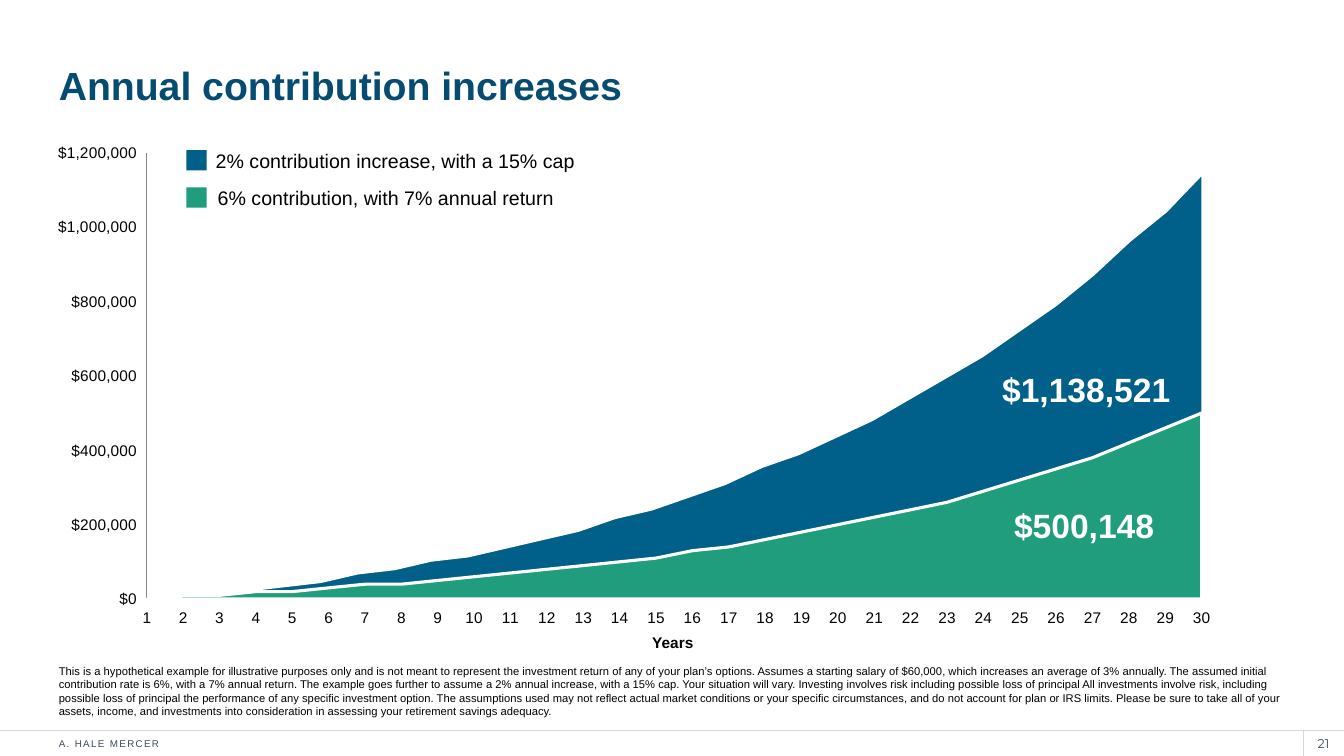
from dataclasses import dataclass

from lxml import etree
from pptx import Presentation
from pptx.chart.data import CategoryChartData
from pptx.dml.color import RGBColor
from pptx.enum.chart import XL_CHART_TYPE, XL_TICK_LABEL_POSITION, XL_TICK_MARK
from pptx.enum.shapes import MSO_CONNECTOR, MSO_SHAPE
from pptx.enum.text import MSO_ANCHOR, PP_ALIGN
from pptx.oxml import parse_xml
from pptx.oxml.ns import qn
from pptx.util import Pt

AREA = XL_CHART_TYPE.AREA
NO_TICK = XL_TICK_MARK.NONE
LOW = XL_TICK_LABEL_POSITION.LOW
RECTANGLE, STRAIGHT = MSO_SHAPE.RECTANGLE, MSO_CONNECTOR.STRAIGHT
TOP, MIDDLE, BOTTOM = MSO_ANCHOR.TOP, MSO_ANCHOR.MIDDLE, MSO_ANCHOR.BOTTOM
LEFT, CENTER, RIGHT = PP_ALIGN.LEFT, PP_ALIGN.CENTER, PP_ALIGN.RIGHT

COLORS = {
    "title": "054C70", "text": "000000", "white": "FFFFFF", "footer": "3B4B59",
    "rule": "D8D8D8", "axis": "868686", "increase": "00608A", "flat": "209D7D",
}
NS = ('xmlns:c="http://schemas.openxmlformats.org/drawingml/2006/chart" '
      'xmlns:a="http://schemas.openxmlformats.org/drawingml/2006/main"')
CHART_BOX = (7.92, 95.76, 874.08, 360.72)
YEARS = range(1, 31)


@dataclass
class Label:
    text: str
    box: tuple[float, float, float, float]
    size: float
    color: str = "text"
    bold: bool = False
    align: PP_ALIGN = LEFT
    anchor: MSO_ANCHOR = TOP
    font: str = "Arial"
    inset: float = 0
    line_spacing: float | None = None
    tracking: int = 0


@dataclass
class Growth:
    color: str
    values: list[int]
    plot: tuple[float, float, float, float]
    maximum: int
    major: int
    number_format: str
    font_size: float
    axes_shown: bool


DISCLAIMER = [
    "This is a hypothetical example for illustrative purposes only and is not meant to represent "
    "the investment return of any of your plan’s options.",
    "Assumes a starting salary of $60,000, which increases an average of 3% annually.",
    "The assumed initial contribution rate is 6%, with a 7% annual return.",
    "The example goes further to assume a 2% annual increase, with a 15% cap.",
    "Your situation will vary.",
    "Investing involves risk including possible loss of principal All investments involve risk, "
    "including possible loss of principal the performance of any specific investment option.",
    "The assumptions used may not reflect actual market conditions or your specific "
    "circumstances, and do not account for plan or IRS limits.",
    "Please be sure to take all of your assets, income, and investments into consideration in "
    "assessing your retirement savings adequacy.",
]

GROWTHS = [
    Growth("increase",
           [0, 1, 1, 2, 3, 4, 6, 7, 9, 10, 12, 14, 16, 19, 21, 24, 27, 31, 34, 38,
            42, 47, 52, 57, 63, 69, 76, 84, 91, 100],
           (0.103, 0.034, 0.871, 0.886), 105, 9, '"$"#,##0.00', 18, False),
    Growth("flat",
           [10000 * v for v in (0, 1, 1, 2, 2, 3, 4, 4, 5, 6, 7, 8, 9, 10, 11, 13, 14, 16, 18,
                                20, 22, 24, 26, 29, 32, 35, 38, 42, 46, 50)],
           (0.111, 0.037, 0.862, 0.884), 1200000, 200000, '"$"#,##0', 11, True),
]

LABELS = [
    Label("21", (930.96, 522, 28.8, 18), 9, "footer", align=CENTER, anchor=MIDDLE,
          font="Montserrat"),
    Label("A. HALE MERCER", (42, 527, 249.84, 8.64), 7, "footer", anchor=BOTTOM, tracking=100),
    Label(" ".join(DISCLAIMER), (42, 476.64, 876.24, 36), 8, anchor=BOTTOM),
    Label("Annual contribution increases", (42, 21.6, 876.24, 56.16), 28, "title", True,
          anchor=BOTTOM, line_spacing=0.85),
    Label("$500,148", (720.72, 360.72, 103.68, 28.8), 24, "white", True, RIGHT),
    Label("$1,138,521", (710.64, 263.52, 125.28, 28.8), 24, "white", True, RIGHT),
    Label("Years", (104.4, 452.16, 752.4, 13.68), 11, bold=True, align=CENTER),
    Label("6% contribution, with 7% annual return", (151.92, 128.88, 252, 24.48), 14,
          anchor=MIDDLE, inset=3.6),
    Label("2% contribution increase, with a 15% cap", (150.48, 102.24, 278.64, 24.48), 14,
          anchor=MIDDLE, inset=3.6),
]

LEGEND_KEYS = {"flat": 133.92, "increase": 107.28}
FOOTER_RULES = [(0, 522, 960, 522), (930.96, 522, 930.96, 540)]


def rgb(name: str) -> RGBColor:
    return RGBColor.from_string(COLORS[name])


def add_label(slide, label: Label) -> None:
    box = slide.shapes.add_textbox(*map(Pt, label.box))
    frame = box.text_frame
    frame.word_wrap = True
    frame.vertical_anchor = label.anchor
    frame.margin_left = frame.margin_right = Pt(label.inset)
    frame.margin_top = frame.margin_bottom = Pt(label.inset)
    frame.text = label.text
    paragraph = frame.paragraphs[0]
    paragraph.alignment = label.align
    if label.line_spacing:
        paragraph.line_spacing = label.line_spacing
    run = paragraph.runs[0]
    run.font.name, run.font.size, run.font.bold = label.font, Pt(label.size), label.bold
    run.font.color.rgb = rgb(label.color)
    if label.tracking:
        run.font._element.set("spc", str(label.tracking))


def add_growth(slide, growth: Growth) -> None:
    data = CategoryChartData()
    data.categories = [str(year) for year in YEARS]
    data.add_series("Series 1", growth.values)
    chart = slide.shapes.add_chart(AREA, *map(Pt, CHART_BOX), data).chart
    chart.has_legend = chart.has_title = False
    chart.font.name, chart.font.size = "Arial", Pt(growth.font_size)
    chart.font.color.rgb = rgb("text")
    plot = chart.plots[0]
    plot.vary_by_categories = False
    series_format = plot.series[0].format
    series_format.fill.solid()
    series_format.fill.fore_color.rgb = rgb(growth.color)
    series_format.line.color.rgb = rgb("white")
    series_format.line.width = Pt(2.25)

    # Axes
    years, dollars = chart.category_axis, chart.value_axis
    for axis in (years, dollars):
        axis.visible = growth.axes_shown
        axis.has_major_gridlines = False
        axis.major_tick_mark = axis.minor_tick_mark = NO_TICK
        axis.tick_label_position = LOW
    years.format.line.fill.background()
    dollars.format.line.color.rgb = rgb("axis")
    dollars.format.line.width = Pt(0.75)
    dollars.minimum_scale, dollars.maximum_scale = 0, growth.maximum
    dollars.major_unit = growth.major
    dollars.tick_labels.number_format = growth.number_format
    dollars.tick_labels.number_format_is_linked = False

    # Fixed plot area and clear backgrounds, so that both areas show
    space = chart.element
    area = space.find(".//" + qn("c:plotArea"))
    area.find(".//" + qn("c:crossBetween")).set("val", "midCat")
    for old in area.findall(qn("c:layout")):
        area.remove(old)
    places = "".join(f'<c:{tag} val="{value}"/>' for tag, value in zip("xywh", growth.plot))
    area.insert(0, parse_xml(
        f'<c:layout {NS}><c:manualLayout><c:layoutTarget val="inner"/><c:xMode val="edge"/>'
        f'<c:yMode val="edge"/>{places}</c:manualLayout></c:layout>'))
    clear = f"<c:spPr {NS}><a:noFill/><a:ln><a:noFill/></a:ln></c:spPr>"
    area.append(parse_xml(clear))
    space.find(qn("c:chart")).addnext(parse_xml(clear))


def add_rule(slide, ends: tuple[float, float, float, float]) -> None:
    rule = slide.shapes.add_connector(STRAIGHT, *map(Pt, ends))
    rule.line.color.rgb = rgb("rule")
    rule.line.width = Pt(0.75)
    etree.SubElement(rule._element.spPr, qn("a:effectLst"))


def add_legend_key(slide, color: str, top: float) -> None:
    key = slide.shapes.add_shape(RECTANGLE, Pt(133.2), Pt(top), Pt(14.4), Pt(14.4))
    key.shadow.inherit = False
    key.fill.solid()
    key.fill.fore_color.rgb = rgb(color)
    key.line.fill.background()


def main() -> None:
    deck = Presentation()
    deck.slide_width, deck.slide_height = Pt(960), Pt(540)
    slide = deck.slides.add_slide(deck.slide_layouts[6])
    for ends in FOOTER_RULES:
        add_rule(slide, ends)
    for growth in GROWTHS:
        add_growth(slide, growth)
    for label in LABELS:
        add_label(slide, label)
    for color, top in LEGEND_KEYS.items():
        add_legend_key(slide, color, top)
    deck.save("out.pptx")


if __name__ == "__main__":
    main()
